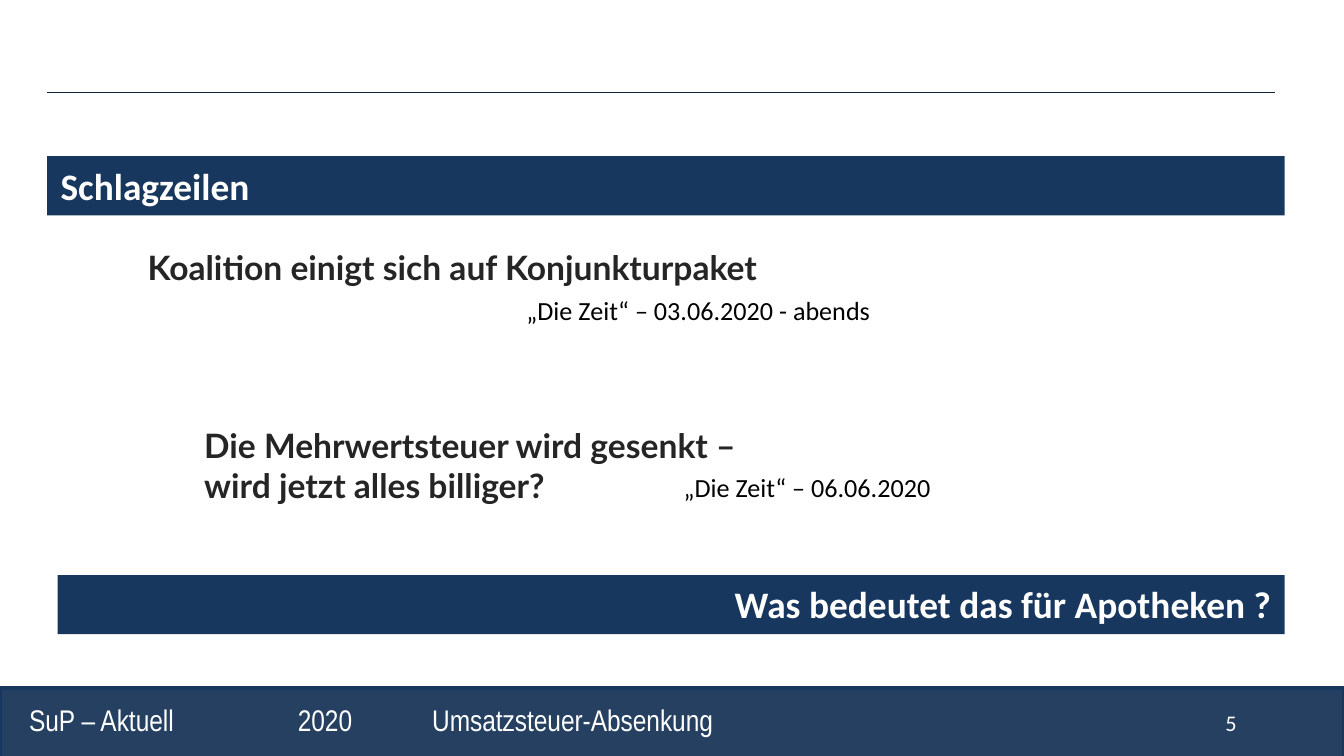
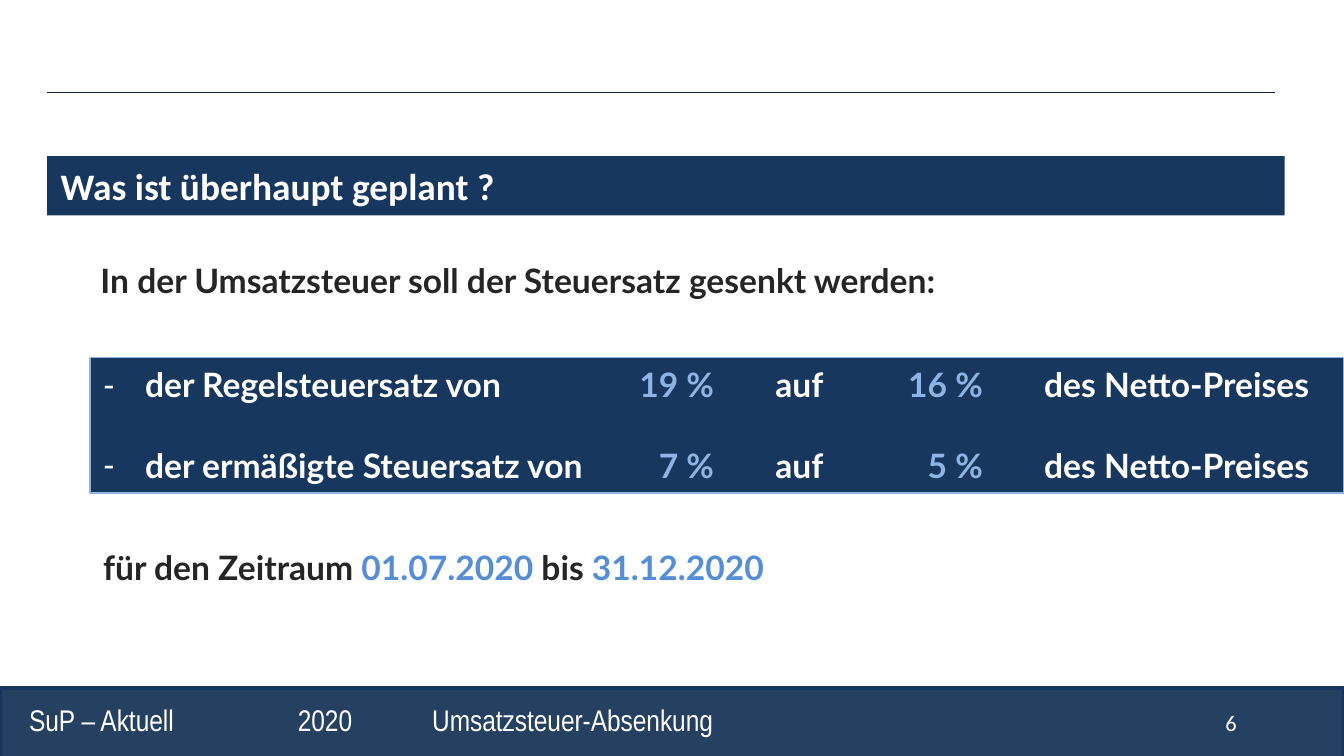
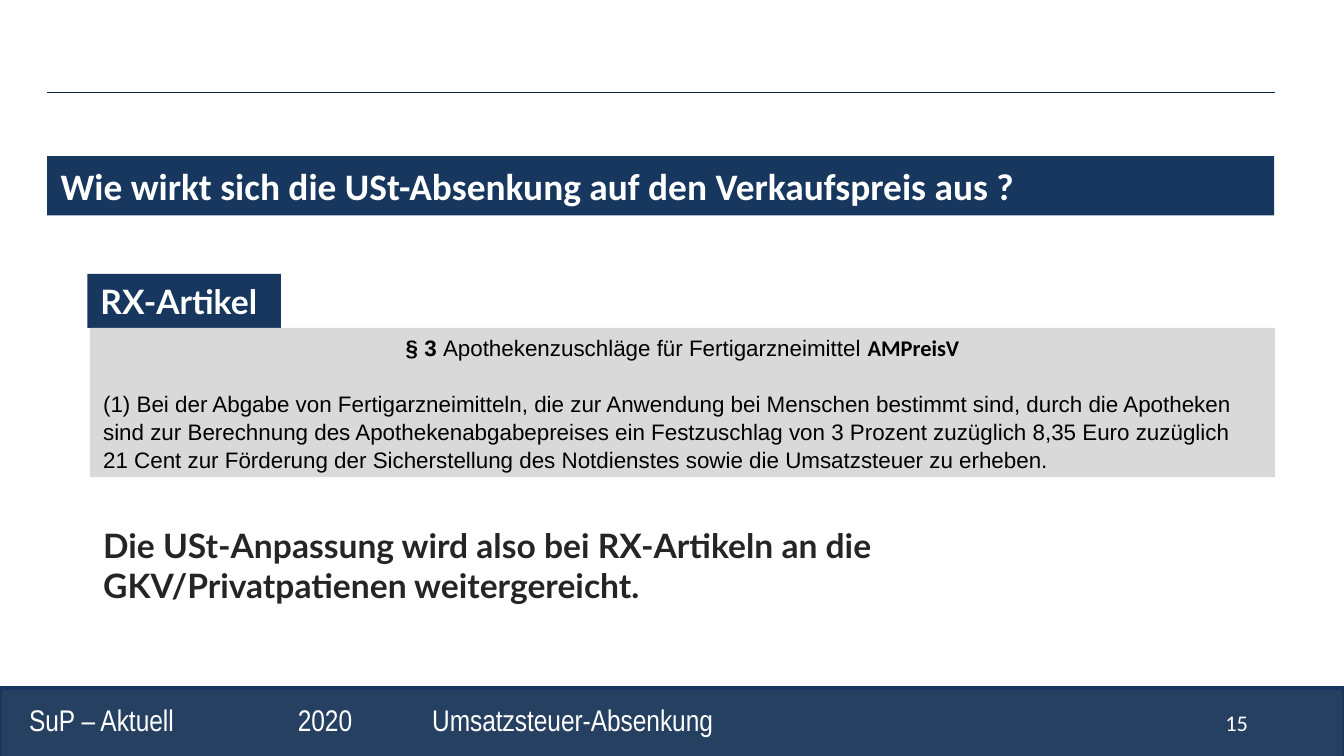
from dataclasses import dataclass
from typing import NamedTuple, Optional

from lxml.etree import SubElement
from pptx import Presentation
from pptx.dml.color import RGBColor
from pptx.enum.shapes import MSO_CONNECTOR as Line, MSO_SHAPE as Shape
from pptx.enum.text import MSO_ANCHOR as Anchor, MSO_AUTO_SIZE as Fit, PP_ALIGN as Align
from pptx.oxml.ns import qn
from pptx.util import Cm, Pt


@dataclass(frozen=True)
class Theme:
    navy: str = "17375E"
    rule: str = "0F243E"
    footer: str = "254061"
    ink: str = "252525"
    black: str = "000000"
    white: str = "FFFFFF"
    grey: str = "D9D9D9"
    sky: str = "8EB4E3"
    blue: str = "558ED5"
    heading_font: str = "Calibri"
    body_font: str = "Lato"
    footer_font: str = "Arial Narrow"
    law_font: str = "Arial"
    band_size: int = 20
    body_size: int = 18
    footer_size: int = 16
    source_size: int = 14
    small_size: int = 12


T = Theme()


class Box(NamedTuple):
    left: float
    top: float
    width: float
    height: float


class Tab(NamedTuple):
    pos: float
    align: str = "l"


class Statement(NamedTuple):
    box: Box
    lines: list[str]


class Source(NamedTuple):
    box: Box
    text: str


class Rate(NamedTuple):
    name: str
    old: str
    new: str


BAND = Box(0.89, 2.95, 23.39, 1.12)
NARROW_BAND = BAND._replace(width=23.19)
FOOTER_TABS = [Tab(5.08), Tab(7.62)]
RATE_TABS = [Tab(11.54, "r"), Tab(12.7), Tab(16.62, "r"), Tab(17.78)]
TITLE_AND_BODY, TITLE_ONLY = 1, 5


def rgb(color: str) -> RGBColor:
    return RGBColor.from_string(color)


def add_text(p, text: str, *, font: str = T.body_font, size: int = T.body_size,
             color: str = T.ink, bold: bool = True) -> None:
    r = p.add_run()
    r.text = text
    r.font.name = font
    r.font.size = Pt(size)
    r.font.bold = bold
    r.font.color.rgb = rgb(color)


def add_tabs(p, tabs: list[Tab]) -> None:
    tab_list = SubElement(p._p.get_or_add_pPr(), qn("a:tabLst"))
    for tab in tabs:
        SubElement(tab_list, qn("a:tab"), pos=str(Cm(tab.pos)), algn=tab.align)


def add_dash(p) -> None:
    pPr = p._p.get_or_add_pPr()
    pPr.set("marL", str(Cm(0.79)))
    pPr.set("indent", str(-Cm(0.79)))
    SubElement(pPr, qn("a:buChar"), char="-")


def place(sp, box: Box):
    sp.left, sp.top, sp.width, sp.height = map(Cm, box)


def prepare(sp):
    tf = sp.text_frame
    tf.word_wrap = True
    tf.auto_size = Fit.NONE
    tf.vertical_anchor = Anchor.TOP
    tf.paragraphs[0].alignment = Align.LEFT
    return tf


def paint(sp, fill: str, line: Optional[str] = None, width: float = 0.75) -> None:
    sp.fill.solid()
    sp.fill.fore_color.rgb = rgb(fill)
    if line:
        sp.line.color.rgb = rgb(line)
        sp.line.width = Pt(width)
    else:
        sp.line.fill.background()


def add_panel(s, box: Box, fill: str, line: Optional[str] = None, width: float = 0.75):
    sp = s.shapes.add_shape(Shape.RECTANGLE, *map(Cm, box))
    sp.shadow.inherit = False
    paint(sp, fill, line, width)
    return prepare(sp)


def add_box(s, box: Box):
    return prepare(s.shapes.add_textbox(*map(Cm, box)))


def add_band_text(p, text: str) -> None:
    add_text(p, text, font=T.heading_font, size=T.band_size, color=T.white)


def add_statement(s, statement: Statement) -> None:
    tf = add_box(s, statement.box)
    for i, line in enumerate(statement.lines):
        add_text(tf.add_paragraph() if i else tf.paragraphs[0], line)


def add_frame(s, number: int) -> None:
    rule = s.shapes.add_connector(Line.STRAIGHT, Cm(0.89), Cm(1.75), Cm(24.1), Cm(1.75))
    rule.line.color.rgb = rgb(T.rule)
    rule.line.width = Pt(0.75)
    SubElement(rule._element.spPr, qn("a:effectLst"))
    add_panel(s, Box(0, 13, 25.4, 1.32), T.footer, T.navy, 2)
    add_text(add_box(s, Box(22.91, 13.28, 1.8, 0.76)).paragraphs[0], str(number),
             font=T.heading_font, size=T.small_size, color=T.white, bold=False)
    p = add_box(s, Box(0.3, 13.13, 23.8, 0.94)).paragraphs[0]
    add_tabs(p, FOOTER_TABS)
    add_text(p, "SuP – Aktuell\t2020\tUmsatzsteuer-Absenkung",
             font=T.footer_font, size=T.footer_size, color=T.white, bold=False)


def new_slide(prs, layout: int, number: int, title: str, band: Box = BAND):
    s = prs.slides.add_slide(prs.slide_layouts[layout])
    add_frame(s, number)
    sp = s.shapes.title
    place(sp, band)
    paint(sp, T.navy)
    add_band_text(prepare(sp).paragraphs[0], title)
    return s


def build_headlines(prs) -> None:
    s = new_slide(prs, TITLE_ONLY, 5, "Schlagzeilen")
    for statement in (
        Statement(Box(2.54, 4.55, 12.7, 1.8), ["Koalition einigt sich auf Konjunkturpaket"]),
        Statement(Box(3.61, 7.9, 12.7, 1.8),
                  ["Die Mehrwertsteuer wird gesenkt –", "wird jetzt alles billiger?"]),
    ):
        add_statement(s, statement)
    for source in (
        Source(Box(9.7, 5.44, 7.59, 0.86), "„Die Zeit“ – 03.06.2020 - abends"),
        Source(Box(12.67, 8.79, 6.6, 0.86), "„Die Zeit“ – 06.06.2020"),
    ):
        add_text(add_box(s, source.box).paragraphs[0], source.text, font=T.heading_font,
                 size=T.source_size, color=T.black, bold=False)
    p = add_panel(s, Box(1.09, 10.87, 23.19, 1.12), T.navy).paragraphs[0]
    p.alignment = Align.RIGHT
    add_band_text(p, "Was bedeutet das für Apotheken ?")


def build_rates(prs) -> None:
    s = new_slide(prs, TITLE_AND_BODY, 6, "Was ist überhaupt geplant ?")
    add_statement(s, Statement(Box(1.65, 4.78, 20, 1.02),
                               ["In der Umsatzsteuer soll der Steuersatz gesenkt werden:"]))
    body = s.placeholders[1]
    place(body, Box(1.7, 6.76, 23.7, 2.56))
    paint(body, T.navy, T.sky)
    tf = prepare(body)
    rates = [
        Rate("der Regelsteuersatz von", "19 %", "16 %"),
        Rate("der ermäßigte Steuersatz von", "7 %", "5 %"),
    ]
    for i, rate in enumerate(rates):
        p = tf.add_paragraph() if i else tf.paragraphs[0]
        add_dash(p)
        add_tabs(p, RATE_TABS)
        p.alignment = Align.LEFT
        p.space_before = Pt(21.6 if i else 0)
        for text, color in (
            (f"{rate.name}\t", T.white),
            (rate.old, T.sky),
            ("\tauf\t", T.white),
            (rate.new, T.sky),
            ("\tdes Netto-Preises", T.white),
        ):
            add_text(p, text, color=color)
    p = add_box(s, Box(1.7, 10.21, 17.6, 1.02)).paragraphs[0]
    for text, color in (
        ("für den Zeitraum ", T.ink),
        ("01.07.2020", T.blue),
        (" bis ", T.ink),
        ("31.12.2020", T.blue),
    ):
        add_text(p, text, color=color)


def build_prescription(prs) -> None:
    s = new_slide(prs, TITLE_ONLY, 15,
                  "Wie wirkt sich die USt-Absenkung auf den Verkaufspreis aus ?", NARROW_BAND)
    label = add_panel(s, Box(1.65, 5.18, 3.66, 1.02), T.navy)
    add_text(label.paragraphs[0], "RX-Artikel", color=T.white)
    tf = add_panel(s, Box(1.7, 6.2, 22.4, 2.82), T.grey)
    heading, clause = tf.paragraphs[0], tf.add_paragraph()
    heading.alignment = Align.CENTER
    clause.alignment = Align.LEFT
    clause.line_spacing = 1.05
    clause.space_before = Pt(14.5)
    for p, text, font, bold in (
        (heading, "§ 3 ", T.law_font, True),
        (heading, "Apothekenzuschläge für Fertigarzneimittel ", T.law_font, False),
        (heading, "AMPreisV", T.heading_font, True),
        (clause, "(1) Bei der Abgabe von Fertigarzneimitteln, die zur Anwendung bei Menschen "
                 "bestimmt sind, durch die Apotheken sind zur Berechnung des "
                 "Apothekenabgabepreises ein Festzuschlag von 3 Prozent zuzüglich 8,35 Euro "
                 "zuzüglich 21 Cent zur Förderung der Sicherstellung des Notdienstes sowie "
                 "die Umsatzsteuer zu erheben.", T.law_font, False),
    ):
        add_text(p, text, font=font, size=T.small_size, color=T.black, bold=bold)
    add_statement(s, Statement(Box(1.7, 9.8, 20, 1.8), [
        "Die USt-Anpassung wird also bei RX-Artikeln an die GKV/Privatpatienen weitergereicht."]))


def main() -> None:
    prs = Presentation()
    prs.slide_width, prs.slide_height = Cm(25.4), Cm(14.29)
    build_headlines(prs)
    build_rates(prs)
    build_prescription(prs)
    prs.save("out.pptx")


if __name__ == "__main__":
    main()
